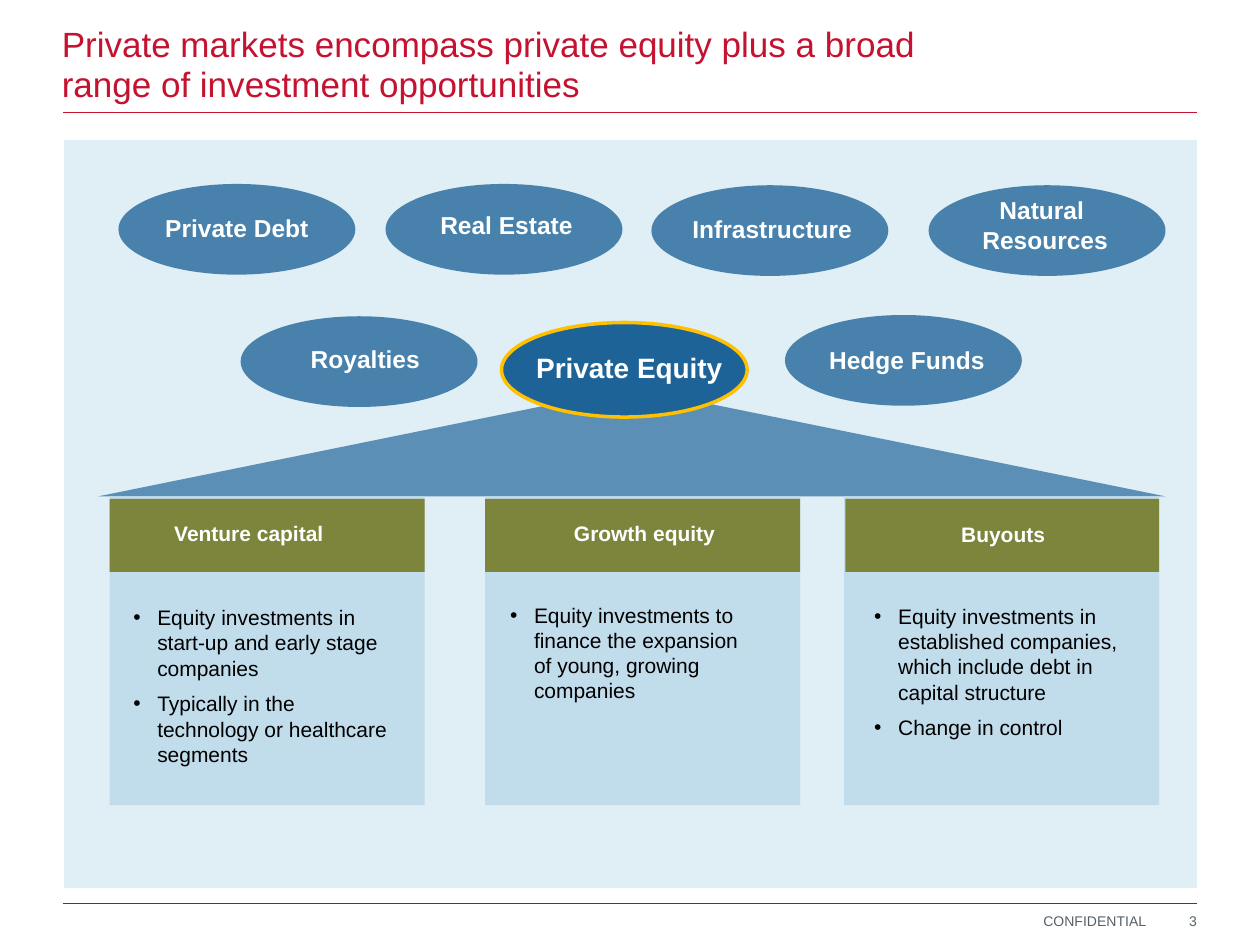
from dataclasses import dataclass

from lxml.etree import SubElement
from pptx import Presentation
from pptx.dml.color import RGBColor
from pptx.enum.shapes import MSO_CONNECTOR as Connector, MSO_SHAPE as Shape
from pptx.enum.text import MSO_ANCHOR as Anchor, MSO_AUTO_SIZE as AutoSize, PP_ALIGN as Align
from pptx.oxml.ns import qn
from pptx.util import Inches, Pt

RED = RGBColor(0xC4, 0x12, 0x30)
BLUE = RGBColor(0x1E, 0x63, 0x98)
PALE_BLUE = RGBColor(0xE0, 0xEE, 0xF5)
LIGHT_BLUE = RGBColor(0xC1, 0xDC, 0xEB)
OLIVE = RGBColor(0x7D, 0x85, 0x3D)
GOLD = RGBColor(0xFF, 0xC0, 0x00)
GREY = RGBColor(0x55, 0x61, 0x68)
DARK_GREY = RGBColor(0x40, 0x40, 0x40)
WHITE = RGBColor(0xFF, 0xFF, 0xFF)
BLACK = RGBColor(0, 0, 0)


@dataclass(frozen=True)
class Area:
    left: float
    top: float
    width: float
    height: float

    def lengths(self):
        return [Inches(n) for n in (self.left, self.top, self.width, self.height)]


@dataclass(frozen=True)
class Market:
    name: str
    left: float
    top: float
    label: Area


@dataclass(frozen=True)
class Strategy:
    name: str
    left: float
    header: Area
    label: Area
    wrap: bool
    body: Area
    points: tuple[str, ...]


MARKETS = [
    Market("Private Debt", 0.94, 1.46, Area(0.97, 1.64, 1.82, 0.34)),
    Market("Real Estate", 3.06, 1.46, Area(3.02, 1.62, 2, 0.34)),
    Market("Infrastructure", 5.17, 1.47, Area(5.08, 1.65, 2.1, 0.34)),
    Market("Natural \vResources", 7.37, 1.47, Area(6.97, 1.5, 2.65, 0.57)),
    Market("Royalties", 1.91, 2.51, Area(1.85, 2.68, 2.1, 0.34)),
    Market("Hedge Funds ", 6.23, 2.5, Area(6.25, 2.69, 1.95, 0.34)),
]

STRATEGIES = [
    Strategy("Venture capital", 0.87, Area(0.87, 3.96, 2.5, 0.58),
             Area(1.13, 4.08, 1.69, 0.3), True, Area(0.96, 4.75, 2.33, 1.19),
             ("Equity investments in start-up and early stage companies",
              "Typically in the technology or healthcare segments")),
    Strategy("Growth equity", 3.85, Area(3.85, 3.96, 2.5, 0.58),
             Area(4.27, 4.08, 1.69, 0.3), True, Area(3.95, 4.73, 2.13, 0.91),
             ("Equity investments to finance the expansion of young, growing companies",)),
    Strategy("Buyouts", 6.7, Area(6.71, 3.96, 2.49, 0.58),
             Area(7.53, 4.09, 0.88, 0.3), False, Area(6.84, 4.74, 2.36, 1.19),
             ("Equity investments in established companies, which include debt in capital structure",
              "Change in control")),
]


def add_block(page, kind: Shape, area: Area, fill: RGBColor, opacity: int = 100):
    block = page.shapes.add_shape(kind, *area.lengths())
    block.shadow.inherit = False
    block.fill.solid()
    block.fill.fore_color.rgb = fill
    block.line.fill.background()
    if opacity < 100:
        color = block.fill._xPr.find(qn("a:solidFill"))[0]
        SubElement(color, qn("a:alpha")).set("val", str(opacity * 1000))
    return block


def add_rule(page, top: float, color: RGBColor) -> None:
    rule = page.shapes.add_connector(
        Connector.STRAIGHT, Inches(0.5), Inches(top), Inches(9.5), Inches(top))
    rule.line.color.rgb = color
    rule.line.width = Pt(0.5)
    SubElement(rule._element.spPr, qn("a:effectLst"))


def add_text(page, area: Area, text: str, size: int, color: RGBColor, bold: bool = False,
             align: Align = Align.LEFT, wrap: bool = True, grow: bool = True,
             bullets: bool = False):
    box = page.shapes.add_textbox(*area.lengths())
    frame = box.text_frame
    frame.text = text
    frame.word_wrap = wrap
    frame.auto_size = AutoSize.SHAPE_TO_FIT_TEXT if grow else AutoSize.NONE
    for para in frame.paragraphs:
        para.alignment = align
        if bullets:
            add_bullet(para)
        for span in para.runs:
            span.font.name = "Arial"
            span.font.size = Pt(size)
            span.font.bold = bold
            span.font.color.rgb = color
    return frame


def add_bullet(para) -> None:
    properties = para._p.get_or_add_pPr()
    properties.set("marL", str(Inches(0.19)))
    properties.set("indent", str(Inches(-0.19)))
    SubElement(properties, qn("a:buFont")).set("typeface", "Arial")
    SubElement(properties, qn("a:buChar")).set("char", "•")
    para.space_after = Pt(6)


def set_margins(frame, vertical: float) -> None:
    frame.margin_left = frame.margin_right = 0
    frame.margin_top = frame.margin_bottom = Inches(vertical)


def add_market(page, market: Market) -> None:
    add_block(page, Shape.OVAL, Area(market.left, market.top, 1.88, 0.72), BLUE, 78)
    add_text(page, market.label, market.name, 14, WHITE, bold=True, align=Align.CENTER)


def add_strategy(page, strategy: Strategy) -> None:
    add_block(page, Shape.RECTANGLE, Area(strategy.left, 3.94, 2.5, 2.45), LIGHT_BLUE)
    add_block(page, Shape.RECTANGLE, strategy.header, OLIVE)
    add_text(page, strategy.label, strategy.name, 12, WHITE, bold=True,
             align=Align.CENTER if strategy.wrap else Align.LEFT, wrap=strategy.wrap)
    add_text(page, strategy.body, "\n".join(strategy.points), 12, BLACK, bullets=True)


def add_frame(page) -> None:
    title = add_text(page, Area(0.49, 0.11, 7.09, 0.78),
                     "Private markets encompass private equity plus a broad "
                     "range of investment opportunities", 20, RED, grow=False)
    title.vertical_anchor = Anchor.BOTTOM
    title.paragraphs[0].line_spacing = 0.95
    set_margins(title, 0.05)
    add_rule(page, 0.89, RED)
    add_rule(page, 7.17, DARK_GREY)
    notice = add_text(page, Area(8.28, 7.24, 0.82, 0.13), "CONFIDENTIAL", 8, GREY, wrap=False)
    set_margins(notice, 0)
    number = add_text(page, Area(8.78, 7.22, 0.72, 0.18), "3", 8, GREY,
                      align=Align.RIGHT, grow=False)
    number.vertical_anchor = Anchor.MIDDLE
    set_margins(number, 0)


def main() -> None:
    deck = Presentation()
    deck.slide_width, deck.slide_height = Inches(10), Inches(7.5)
    page = deck.slides.add_slide(deck.slide_layouts[6])
    add_frame(page)
    add_block(page, Shape.RECTANGLE, Area(0.51, 1.11, 8.99, 5.94), PALE_BLUE)
    roof = add_block(page, Shape.TRAPEZOID, Area(0.78, 3.08, 8.47, 0.86), BLUE, 68)
    roof.adjustments[0] = 5.09
    for strategy in STRATEGIES:
        add_strategy(page, strategy)
    focus = add_block(page, Shape.OVAL, Area(3.98, 2.56, 1.95, 0.75), BLUE)
    focus.line.color.rgb = GOLD
    focus.line.width = Pt(2)
    add_text(page, Area(3.84, 2.73, 2.31, 0.37), "Private Equity", 16, WHITE,
             bold=True, align=Align.CENTER)
    for market in MARKETS:
        add_market(page, market)
    deck.save("out.pptx")


if __name__ == "__main__":
    main()
